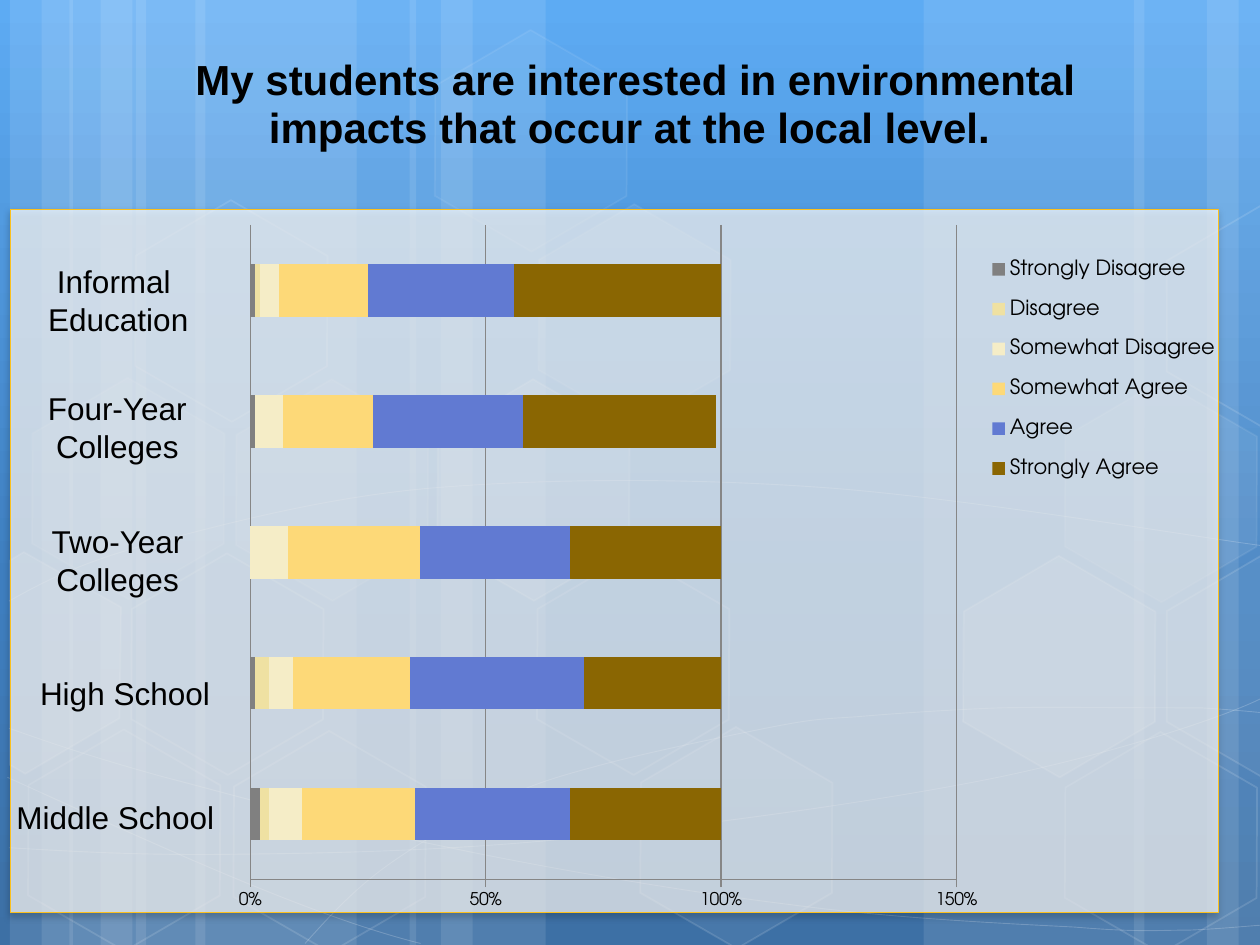
import pptx
import pptx.chart.data
import pptx.dml.color
import pptx.enum.chart
import pptx.enum.shapes
import pptx.enum.text
import pptx.oxml
import pptx.oxml.ns
import pptx.util
from lxml import etree

Cm, Pt = pptx.util.Cm, pptx.util.Pt
RGB = pptx.dml.color.RGBColor.from_string
qn = pptx.oxml.ns.qn
SHAPE = pptx.enum.shapes.MSO_SHAPE


class Theme:
    sky = [(0, "5DABF3"), (62, "3E7EBF"), (100, "3D70A5")]
    white, black = "FFFFFF", "000000"
    panel_line, grid = "FBC01E", "868686"
    series = ["808080", "EFE1A2", "F5EDC7", "FDD978", "617AD2", "8A6602"]
    head_font, chart_font = "Arial", "TeX Gyre Adventor"
    title, label, legend, axis = Pt(24), Pt(18), Pt(12), Pt(10)


def paint(sp, fill=None, line=None, width=1, line_color=Theme.white):
    """White fill and coloured line; fill and line are opacities in percent."""
    sp.shadow.inherit = False
    for part, opacity, color in ((sp.fill, fill, Theme.white),
                                 (sp.line.fill, line, line_color)):
        if opacity is None:
            part.background()
        else:
            part.solid()
            part.fore_color.rgb = RGB(color)
    if line is not None:
        sp.line.width = Pt(width)
    for opacity, where in ((fill, "a:solidFill"), (line, "a:ln/a:solidFill")):
        for clr in sp.element.xpath(f"p:spPr/{where}/a:srgbClr"):
            etree.SubElement(clr, qn("a:alpha"), val=str(opacity * 1000))


def place(parent, **values):
    """Manual layout of a chart part, as shares of the chart area."""
    for old in parent.findall(qn("c:layout")):
        parent.remove(old)
    layout = etree.Element(qn("c:layout"))
    manual = etree.SubElement(layout, qn("c:manualLayout"))
    for tag, val in values.items():
        etree.SubElement(manual, qn("c:" + tag), val=str(val))
    overlay = parent.find(qn("c:overlay"))
    if overlay is None:
        parent.insert(0, layout)
    else:
        overlay.addprevious(layout)


prs = pptx.Presentation()
prs.slide_width, prs.slide_height = Cm(25.4), Cm(19.05)
s = prs.slides.add_slide(prs.slide_layouts[6])

# Background gradient
bg = s.background.fill
bg.gradient()
bg.gradient_angle = 270
stops = s.element.find(".//" + qn("a:gsLst"))
for gs in list(stops):
    stops.remove(gs)
for pos, color in Theme.sky:
    gs = etree.SubElement(stops, qn("a:gs"), pos=str(pos * 1000))
    etree.SubElement(gs, qn("a:srgbClr"), val=color)

# Vertical light bands: left, width
wide, mid, thin = 4.45, 2.11, 1.27
for left, width in [(2.74, wide), (0.2, thin), (0.84, mid), (3.94, wide),
                    (1.4, thin), (2.03, mid), (18.62, wide), (24.33, thin),
                    (22.86, mid), (8.26, thin), (8.89, mid)]:
    sp = s.shapes.add_shape(SHAPE.RECTANGLE, Cm(left), 0, Cm(width), prs.slide_height)
    paint(sp, fill=10)

# Thin curves: a start point, then three Bezier points per segment
curves = [
    [(0.18, 17.09), (1.55, 17.17), (2.92, 17.25), (4.83, 17.22),
     (6.73, 17.2), (9.09, 17.15), (11.63, 16.89),
     (14.17, 16.64), (17.78, 16.15), (20.12, 15.67),
     (22.43, 15.19), (24.82, 14.43), (25.58, 14)],
    [(0.18, 12.12), (0.91, 11.71), (1.65, 11.33), (3.07, 10.95),
     (4.52, 10.57), (6.58, 10.01), (8.81, 9.83),
     (11.07, 9.65), (13.82, 9.63), (16.61, 9.83),
     (19.41, 10.03), (24.05, 10.82), (25.58, 11.02)],
    [(0.15, 15.67), (3.23, 17.07), (6.27, 18.47), (8.48, 19.02)],
    [(0.18, 14.68), (0.97, 14.96), (1.78, 15.24), (3.25, 15.65),
     (4.72, 16.03), (6.93, 16.66), (9.07, 17.09),
     (11.18, 17.53), (13.84, 17.98), (15.95, 18.24),
     (18.06, 18.52), (20.32, 18.62), (21.67, 18.69),
     (22.99, 18.8), (23.34, 18.75), (24, 18.75),
     (24.66, 18.72), (25.12, 18.67), (25.58, 18.64)],
    [(6.15, 19.02), (6.6, 18.52), (7.06, 18.01), (7.67, 17.55),
     (8.28, 17.09), (9.14, 16.59), (9.86, 16.23),
     (10.57, 15.88), (11, 15.72), (11.94, 15.47),
     (12.85, 15.21), (14.55, 14.86), (15.44, 14.68),
     (16.36, 14.5), (16.48, 14.5), (17.27, 14.45),
     (18.06, 14.38), (19.3, 14.3), (20.17, 14.27),
     (21.06, 14.25), (22.5, 14.27), (24.21, 14.27),
     (24.66, 14.3), (25.1, 14.33), (25.55, 14.38)],
]
outlines = [(curve, False, None, 20, 0.5) for curve in curves]

# Hexagons cut off at the slide edges
outlines += [
    ([(0.2, 11.3), (0.48, 11.13), (2.44, 12.24), (2.41, 14.48), (0.51, 15.6),
      (0.2, 15.42)], True, 10, 12, 1),
    ([(23.52, 12.32), (25.43, 11.2), (25.63, 11.33), (25.63, 15.57), (25.45, 15.67),
      (23.52, 14.55)], True, 4, 12, 1),
    ([(23.52, 5.26), (25.43, 4.14), (25.65, 4.27), (25.63, 8.51), (25.45, 8.61),
      (23.52, 7.49)], True, None, 12, 1),
]
for points, closed, fill, line, width in outlines:
    points = [(Cm(x), Cm(y)) for x, y in points]
    builder = s.shapes.build_freeform(*points[0])
    builder.add_line_segments(points[1:], close=closed)
    sp = builder.convert_to_shape()
    paint(sp, fill, line, width)
    if not closed:  # join each three line steps into one Bezier segment
        lines = sp.element.findall(".//" + qn("a:lnTo"))
        for i in range(0, len(lines), 3):
            bezier = etree.Element(qn("a:cubicBezTo"))
            lines[i].addprevious(bezier)
            for step in lines[i:i + 3]:
                bezier.append(step[0])
                step.getparent().remove(step)

# Whole hexagons: left, top, fill and line opacity
for left, top, fill, line in [
        (8.53, 7.95, 10, 12), (10.54, 11.46, None, 12), (10.57, 4.42, 7, 8),
        (8.48, 0.91, 4, 8), (12.62, 14.96, 6, 12), (0.28, 15.01, None, 12),
        (0.36, 7.92, 7, 8), (2.36, 11.46, None, 12), (4.42, 15.04, None, 12),
        (4.47, 7.95, 7, 8), (2.44, 4.34, None, 12), (19.13, 11.51, 10, 12),
        (21.18, 15.06, None, 12), (21.18, 7.98, 7, 8)]:
    sp = s.shapes.add_shape(SHAPE.HEXAGON, Cm(left), Cm(top), Cm(4.45), Cm(3.86))
    sp.adjustments[0] = 0.285
    sp.rotation = 30
    paint(sp, fill, line)

# Panel behind the chart, with a soft shadow
sp = s.shapes.add_shape(SHAPE.RECTANGLE, Cm(0.21), Cm(4.23), Cm(24.35), Cm(14.17))
paint(sp, 70, 100, 0.75, Theme.panel_line)
shadow = etree.SubElement(sp.element.find(".//" + qn("a:effectLst")), qn("a:outerShdw"),
                          blurRad=str(Pt(4)), dist=str(Pt(2)), dir="5400000", rotWithShape="0")
clr = etree.SubElement(shadow, qn("a:srgbClr"), val=Theme.black)
etree.SubElement(clr, qn("a:alpha"), val="28000")

# Stacked bar chart
data = pptx.chart.data.CategoryChartData(number_format="0%")
data.categories = ["1", "2", "3", "4", "5"]
for name, values in [
        ("Strongly Disagree", (0.02, 0.01, 0, 0.01, 0.01)),
        ("Disagree", (0.02, 0.03, 0, 0, 0.01)),
        ("Somewhat Disagree", (0.07, 0.05, 0.08, 0.06, 0.04)),
        ("Somewhat Agree", (0.24, 0.25, 0.28, 0.19, 0.19)),
        ("Agree", (0.33, 0.37, 0.32, 0.32, 0.31)),
        ("Strongly Agree", (0.32, 0.29, 0.32, 0.41, 0.44))]:
    data.add_series(name, values)
chart = s.shapes.add_chart(pptx.enum.chart.XL_CHART_TYPE.BAR_STACKED, Cm(0.21), Cm(0.42),
                           Cm(25.19), Cm(18.21), data).chart
chart.font.name, chart.font.size = Theme.chart_font, Theme.axis
chart.font.color.rgb = RGB(Theme.black)
plot = chart.plots[0]
plot.gap_width, plot.overlap, plot.vary_by_categories = 150, 100, False
for series, color in zip(plot.series, Theme.series):
    series.format.fill.solid()
    series.format.fill.fore_color.rgb = RGB(color)
place(chart.element.find(".//" + qn("c:plotArea")), layoutTarget="inner", xMode="edge",
      yMode="edge", x=0.192, y=0.226, w=0.565, h=0.725)

# Axes
chart.category_axis.visible = False
axis = chart.value_axis
axis.minimum_scale, axis.maximum_scale, axis.major_unit = 0, 1.5, 0.5
axis.major_tick_mark = pptx.enum.chart.XL_TICK_MARK.OUTSIDE
axis.tick_labels.number_format = "0%"
axis.tick_labels.number_format_is_linked = False
axis.has_major_gridlines = True
for line in (axis.format.line, axis.major_gridlines.format.line):
    line.color.rgb = RGB(Theme.grid)
    line.width = Pt(0.75)

# Chart title and legend
tf = chart.chart_title.text_frame
tf.text = "My students are interested in environmental impacts that occur at the local level. "
font = tf.paragraphs[0].runs[0].font
font.name, font.size, font.bold = Theme.head_font, Theme.title, True
font.color.rgb = RGB(Theme.black)
place(chart.element.find(".//" + qn("c:title")), xMode="edge", yMode="edge", x=0.142, y=0.027)
chart.has_legend = True
chart.legend.include_in_layout = False
chart.legend.font.size = Theme.legend
place(chart.legend._element, xMode="edge", yMode="edge", x=0.765, y=0.242, w=0.22, h=0.287)

# School type labels beside the bars
for text, left, top, width, height in [
        ("Informal \nEducation", 0.71, 5.16, 3.35, 1.8),
        ("Four-Year\nColleges", 0.7, 7.72, 3.33, 1.8),
        ("Two-Year\nColleges", 0.77, 10.4, 3.2, 1.8),
        ("High School", 0.54, 13.46, 3.96, 1.02),
        ("Middle School", 0.05, 15.96, 4.55, 1.02)]:
    tf = s.shapes.add_textbox(Cm(left), Cm(top), Cm(width), Cm(height)).text_frame
    tf.word_wrap = False
    tf.text = text
    for p in tf.paragraphs:
        p.alignment = pptx.enum.text.PP_ALIGN.CENTER
        r = p.runs[0]
        r.font.name, r.font.size = Theme.head_font, Theme.label
        r.font.color.rgb = RGB(Theme.black)

prs.save("out.pptx")
